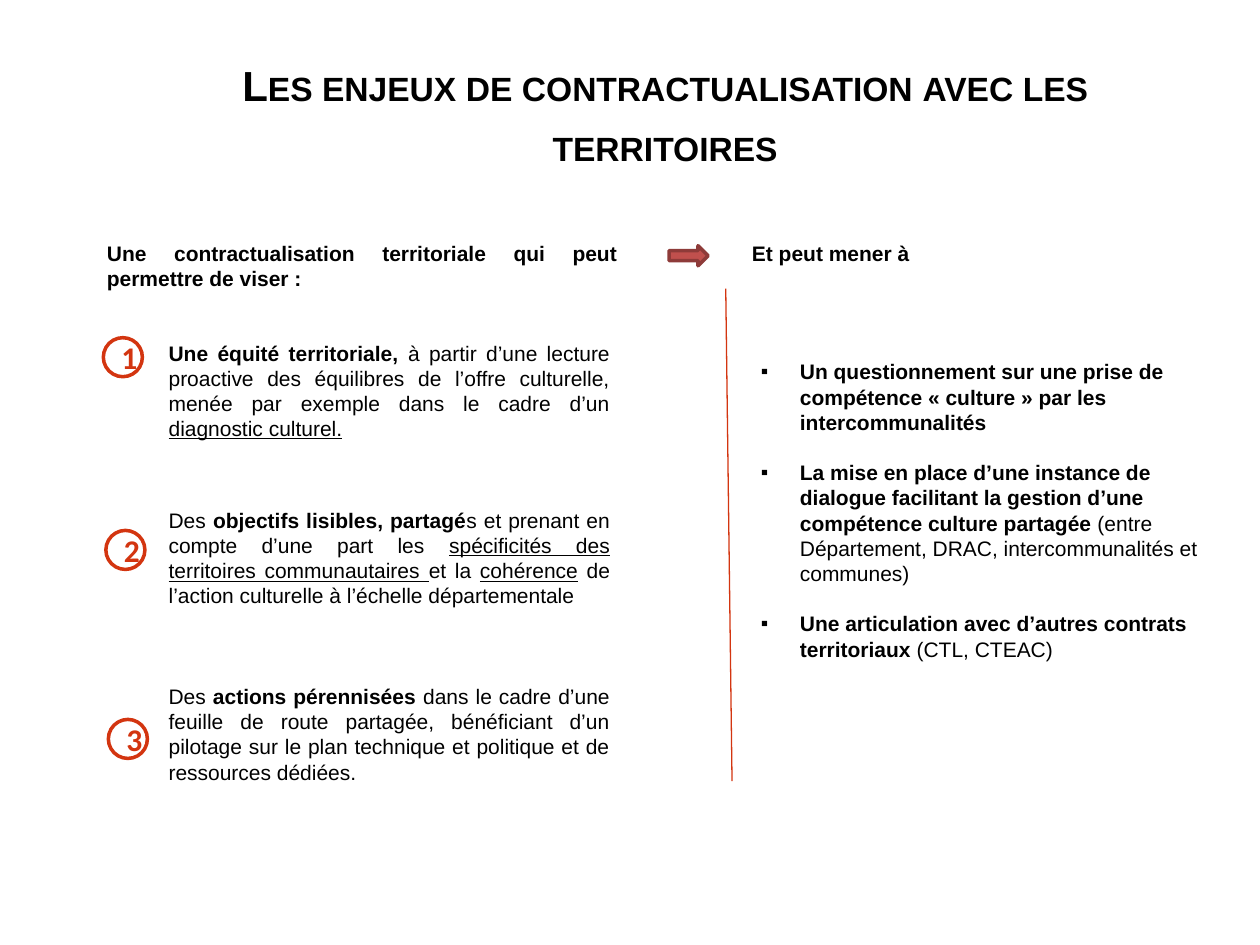
from lxml.etree import SubElement
from pptx import Presentation
from pptx.dml.color import RGBColor
from pptx.enum.shapes import MSO_CONNECTOR as Link, MSO_SHAPE as Form
from pptx.enum.text import MSO_ANCHOR as Anchor, PP_ALIGN as Align
from pptx.oxml.ns import qn
from pptx.util import Inches, Pt

BLACK = RGBColor(0x00, 0x00, 0x00)
ORANGE = RGBColor(0xD3, 0x35, 0x10)
RED = RGBColor(0xC0, 0x50, 0x4D)
MAROON = RGBColor(0x8E, 0x3B, 0x39)

GOALS = [
    (0, [("Une équité territoriale, ", "b"),
         ("à partir d’une lecture proactive des équilibres de l’offre culturelle, "
          "menée par exemple dans le cadre d’un ", ""),
         ("diagnostic culturel.", "u")]),
    (38, [("Des ", ""), ("objectifs lisibles, partagé", "b"),
          ("s et prenant en compte d’une part les ", ""),
          ("spécificités des territoires communautaires ", "u"),
          ("et la ", ""), ("cohérence", "u"),
          (" de l’action culturelle à l’échelle départementale", "")]),
    (43, [("Des", ""), (" actions pérennisées ", "b"),
          ("dans le cadre d’une feuille de route partagée, bénéficiant d’un pilotage "
           "sur le plan technique et politique et de ressources dédiées.", "")]),
]
RESULTS = [
    (0, [("Un questionnement sur une prise de compétence « culture » "
          "par les intercommunalités", "b")]),
    (14.4, [("La mise en place d’une instance de dialogue facilitant la gestion "
             "d’une compétence culture partagée", "b"),
            (" (entre Département, DRAC, intercommunalités et communes)", "")]),
    (14.4, [("Une articulation avec d’autres contrats territoriaux ", "b"),
            ("(CTL, CTEAC)", "")]),
]
BADGES = [(0.82, 2.68), (0.84, 4.21), (0.86, 5.71)]


class Page:
    face = "Arial"
    size = 12

    def __init__(self, slide):
        self.slide = slide

    def style(self, para, size=None, face=None, color=BLACK):
        font = para.font
        font.size = Pt(size or self.size)
        font.name = face or self.face
        font.color.rgb = color
        return font

    def bullet(self, para):
        props = para._p.get_or_add_pPr()
        props.set("marL", str(Inches(0.31)))
        props.set("indent", str(-Inches(0.31)))
        SubElement(props, qn("a:buFont"), typeface="Arial")
        SubElement(props, qn("a:buChar"), char="▪")

    def text(self, box, paras, align=Align.JUSTIFY, dots=False):
        frame = self.slide.shapes.add_textbox(*map(Inches, box)).text_frame
        frame.word_wrap = True
        for num, (gap, runs) in enumerate(paras):
            para = frame.add_paragraph() if num else frame.paragraphs[0]
            para.alignment = align
            if gap:
                para.space_before = Pt(gap)
            if dots:
                self.bullet(para)
            self.style(para)
            for words, mark in runs:
                run = para.add_run()
                run.text = words
                run.font.bold = mark == "b"
                if mark == "u":
                    run.font.underline = True
        return frame

    def title(self, box, words):
        frame = self.text(box, [(0, [(words, "b")])], Align.CENTER)
        frame.vertical_anchor = Anchor.MIDDLE
        para = frame.paragraphs[0]
        para.line_spacing = Pt(34.2)
        self.style(para, 24)
        para.runs[0]._r.get_or_add_rPr().set("cap", "small")

    def shape(self, form, box, line, fill=None):
        shape = self.slide.shapes.add_shape(form, *map(Inches, box))
        shape.shadow.inherit = False
        if fill is None:
            shape.fill.background()
        else:
            shape.fill.solid()
            shape.fill.fore_color.rgb = fill
        shape.line.color.rgb = line
        shape.line.width = Pt(2)
        return shape

    def badge(self, left, top, label):
        shape = self.shape(Form.OVAL, (left, top, 0.31, 0.31), ORANGE)
        frame = shape.text_frame
        frame.vertical_anchor = Anchor.MIDDLE
        para = frame.paragraphs[0]
        para.text = label
        para.alignment = Align.CENTER
        self.style(para, 18, "Calibri", ORANGE).bold = True

    def rule(self, start, end):
        ends = map(Inches, start + end)
        line = self.slide.shapes.add_connector(Link.STRAIGHT, *ends)
        line.line.color.rgb = ORANGE
        line.line.width = Pt(0.75)
        SubElement(line._element.spPr, qn("a:effectLst"))


def main():
    deck = Presentation()
    deck.slide_width, deck.slide_height = Inches(10), Inches(7.5)
    page = Page(deck.slides.add_slide(deck.slide_layouts[6]))

    page.title((1.1, 0.43, 8.36, 0.88),
               "Les enjeux de contractualisation avec les territoires")
    page.text((0.75, 1.86, 4.25, 0.71), [(0, [
        ("Une contractualisation territoriale qui peut permettre de viser :", "b")])])
    page.text((1.24, 2.65, 3.7, 3.94), GOALS)
    page.text((5.94, 2.8, 3.81, 3.13), RESULTS, Align.LEFT, dots=True)
    page.shape(Form.RIGHT_ARROW, (5.31, 1.95, 0.31, 0.16), MAROON, RED)
    page.text((5.87, 1.86, 2.2, 0.31), [(0, [("Et peut mener à", "b")])])
    for num, (left, top) in enumerate(BADGES, 1):
        page.badge(left, top, str(num))
    page.rule((5.76, 2.29), (5.81, 6.2))

    deck.save("out.pptx")


if __name__ == "__main__":
    main()
